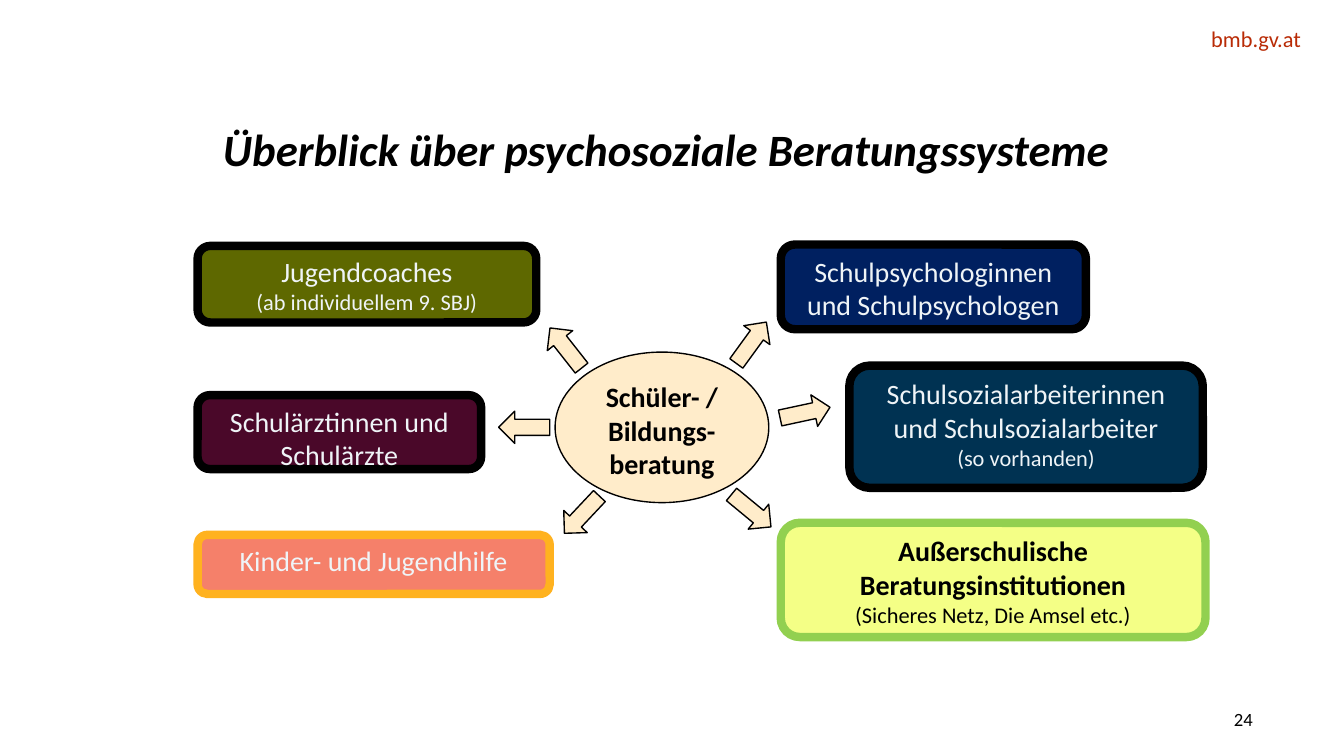
"""Build the overview slide of psychosocial counselling systems."""
import pptx
import pptx.util
import pptx.dml.color
import pptx.enum.shapes
import pptx.enum.text

Pt = pptx.util.Pt
SHAPES = pptx.enum.shapes.MSO_SHAPE
ALIGN = pptx.enum.text.PP_ALIGN
ANCHOR = pptx.enum.text.MSO_ANCHOR

COLORS = {
    "black": "000000", "pale": "EFF4F7", "red": "B92B06", "cream": "FFECCA",
    "olive": "5E6800", "plum": "4A0829", "coral": "F5806A", "amber": "FFB21F",
    "navy": "002060", "petrol": "003252", "yellow": "F4FF86", "green": "92D050",
}

deck = pptx.Presentation()
deck.slide_width = pptx.util.Inches(10)
deck.slide_height = pptx.util.Inches(5.625)
cell = deck.slide_width / 100
slide = deck.slides.add_slide(deck.slide_layouts[5])


def write(frame, lines, color, align=ALIGN.CENTER, anchor=ANCHOR.TOP, inset=(0, 0)):
    frame.word_wrap = True
    frame.vertical_anchor = anchor
    frame.margin_left = frame.margin_right = int(inset[0] * cell)
    frame.margin_top = frame.margin_bottom = int(inset[1] * cell)
    for number, (text, size, bold) in enumerate(lines):
        paragraph = frame.add_paragraph() if number else frame.paragraphs[0]
        paragraph.text = text
        paragraph.alignment = align
        paragraph.font.name = "Calibri"
        paragraph.font.size = Pt(size)
        paragraph.font.bold = bold
        paragraph.font.color.rgb = pptx.dml.color.RGBColor.from_string(COLORS[color])


def draw(kind, grid, fill, line, width):
    shape = slide.shapes.add_shape(kind, *(int(n * cell) for n in grid))
    shape.shadow.inherit = False
    shape.fill.solid()
    shape.fill.fore_color.rgb = pptx.dml.color.RGBColor.from_string(COLORS[fill])
    shape.line.color.rgb = pptx.dml.color.RGBColor.from_string(COLORS[line])
    shape.line.width = Pt(width)
    return shape


title = slide.shapes.title
title.left, title.top, title.width, title.height = (
    int(n * cell) for n in (5.9, 8.6, 87.3, 4.7))
write(title.text_frame, [("Überblick über psychosoziale Beratungssysteme", 24, True)],
      "black", anchor=ANCHOR.MIDDLE)
title.text_frame.word_wrap = False
title.text_frame.auto_size = pptx.enum.text.MSO_AUTO_SIZE.NONE
title.text_frame.paragraphs[0].font.italic = True
title.text_frame.paragraphs[0].line_spacing = Pt(30)

margin_notes = [
    ((72.7, 1.9, 24.1, 2), "bmb.gv.at", 12, "red", ANCHOR.TOP),
    ((82.7, 52.4, 10.5, 2.2), "24", 10, "black", ANCHOR.MIDDLE),
]
for grid, text, size, color, anchor in margin_notes:
    note = slide.shapes.add_textbox(*(int(n * cell) for n in grid))
    write(note.text_frame, [(text, size, False)], color, ALIGN.RIGHT, anchor)

services = [
    ((14.7, 18.3, 25.2, 5.7), "olive", "black", "pale",
     [("Jugendcoaches", 15, False), ("(ab individuellem 9. SBJ)", 12, False)]),
    ((14.7, 29.4, 21.1, 5.5), "plum", "black", "pale",
     [("Schulärztinnen und Schulärzte", 15, False)]),
    ((14.7, 39.8, 26.2, 4.4), "coral", "amber", "pale",
     [("Kinder- und Jugendhilfe", 15, False)]),
    ((58.1, 18.2, 22.7, 6.3), "navy", "black", "pale",
     [("Schulpsychologinnen und Schulpsychologen", 15, False)]),
    ((63.2, 27.2, 26.3, 9.1), "petrol", "black", "pale",
     [("Schulsozialarbeiterinnen und Schulsozialarbeiter", 15, False),
      ("(so vorhanden)", 12, False)]),
    ((58.1, 38.9, 31.6, 8.5), "yellow", "green", "black",
     [("Außerschulische Beratungsinstitutionen", 15, True),
      ("(Sicheres Netz, Die Amsel etc.)", 12, False)]),
]
for grid, fill, line, color, lines in services:
    service = draw(SHAPES.ROUNDED_RECTANGLE, grid, fill, line, 4.5)
    write(service.text_frame, lines, color, inset=(0.7, 0.4))

hub = draw(SHAPES.OVAL, (41.3, 26.2, 15.9, 11.2), "cream", "black", 0.75)
write(hub.text_frame, [("Schüler- / Bildungs- beratung", 15, True)], "black",
      inset=(0.7, 0.4))

arrows = [
    (40.9, 24, 141.8), (37.8, 29.9, 90), (42.1, 36.4, 43.3),
    (54.7, 23.6, 216), (58.7, 28.8, 257.9), (54.7, 36.1, 309.5),
]
for left, top, angle in arrows:
    arrow = draw(SHAPES.DOWN_ARROW, (left, top, 2.4, 3.8), "cream", "black", 0.75)
    arrow.rotation = angle

deck.save("out.pptx")
